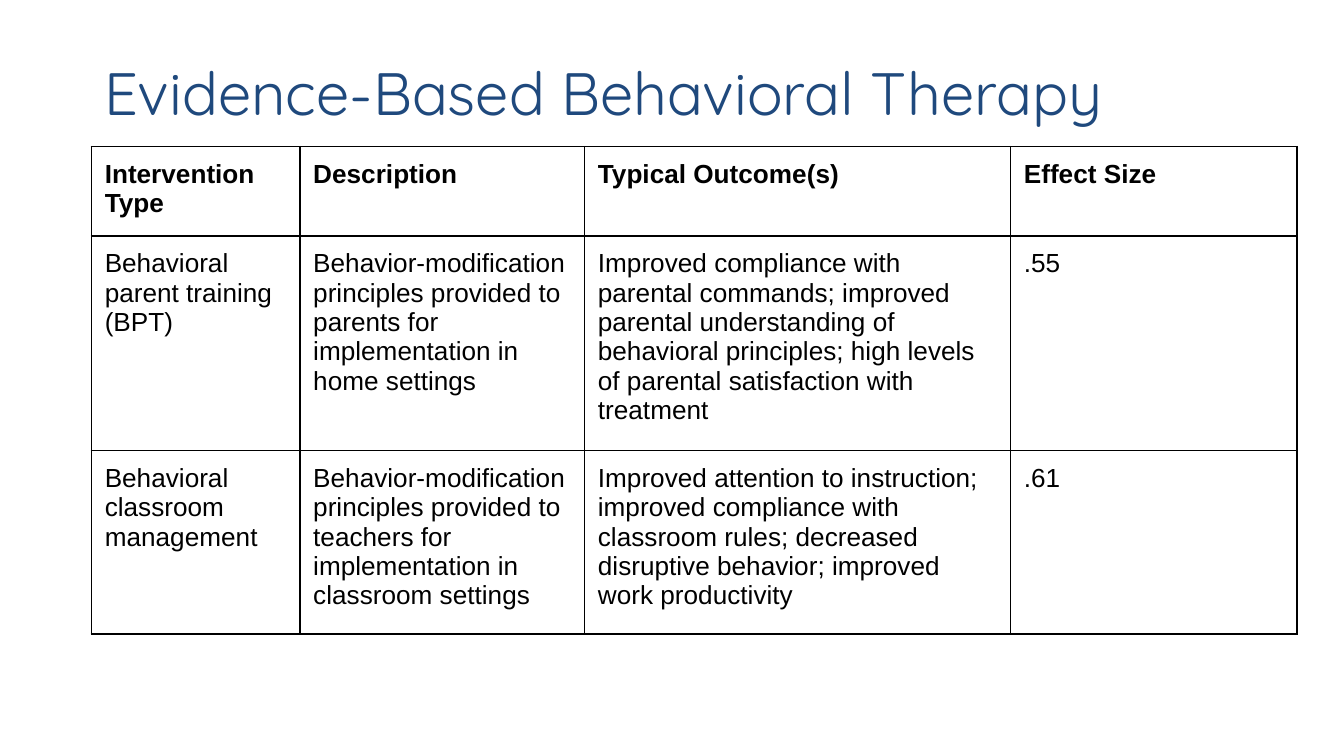
from lxml import etree
from pptx import Presentation
from pptx.dml.color import RGBColor
from pptx.enum.text import MSO_ANCHOR
from pptx.oxml.ns import qn
from pptx.util import Cm, Pt

NAVY = RGBColor(0x1F, 0x49, 0x7D)
BLACK = RGBColor(0, 0, 0)
TOP = MSO_ANCHOR.TOP
INSET = Cm(0.25)
BORDER_WIDTH = Pt(1)
BORDER_TAGS = ("a:lnL", "a:lnR", "a:lnT", "a:lnB")

TITLE_FORMAT = {"name": "Quicksand", "size": Pt(32), "bold": False}
CELL_FORMAT = {"name": "Arial", "size": Pt(14), "bold": False}
HEADER_FORMAT = {**CELL_FORMAT, "bold": True}
MARGINS = {f"margin_{side}": INSET for side in ("left", "top", "right", "bottom")}

COLUMN_WIDTHS = [Cm(3.94), Cm(5.38), Cm(8.05), Cm(5.41)]
ROW_HEIGHTS = [Cm(1.6), Cm(3.84), Cm(3.28)]
INTERVENTIONS = [
    ("Intervention Type", "Description", "Typical Outcome(s)", "Effect Size"),
    ("Behavioral parent training (BPT)",
     "Behavior-modification principles provided to parents for "
     "implementation in home settings",
     "Improved compliance with parental commands; improved parental "
     "understanding of behavioral principles; high levels of parental "
     "satisfaction with treatment",
     ".55"),
    ("Behavioral classroom management",
     "Behavior-modification principles provided to teachers for "
     "implementation in classroom settings",
     "Improved attention to instruction; improved compliance with classroom "
     "rules; decreased disruptive behavior; improved work productivity",
     ".61"),
]


def set_attributes(target, values):
    for name, value in values.items():
        setattr(target, name, value)


def write_text(frame, text, font_format, color):
    span = frame.paragraphs[0].add_run()
    span.text = text
    set_attributes(span.font, font_format)
    span.font.color.rgb = color


def add_borders(cell):
    properties = cell._tc.get_or_add_tcPr()
    for tag in BORDER_TAGS:
        line = etree.SubElement(properties, qn(tag), w=str(BORDER_WIDTH))
        fill = etree.SubElement(line, qn("a:solidFill"))
        etree.SubElement(fill, qn("a:srgbClr"), val=str(BLACK))


def add_title(page, left, top, width, height):
    box = page.shapes.add_textbox(left, top, width, height)
    set_attributes(box.text_frame,
                   {**MARGINS, "word_wrap": True, "vertical_anchor": TOP})
    write_text(box.text_frame, "Evidence-Based Behavioral Therapy",
               TITLE_FORMAT, NAVY)


def add_intervention_table(page, left, top, width, height):
    table = page.shapes.add_table(len(ROW_HEIGHTS), len(COLUMN_WIDTHS),
                                  left, top, width, height).table
    set_attributes(table, {"first_row": False, "horz_banding": False})
    for column, column_width in zip(table.columns, COLUMN_WIDTHS):
        column.width = column_width
    for row_index, (row, row_height) in enumerate(zip(table.rows, ROW_HEIGHTS)):
        row.height = row_height
        font_format = CELL_FORMAT if row_index else HEADER_FORMAT
        for cell, text in zip(row.cells, INTERVENTIONS[row_index]):
            set_attributes(cell, {**MARGINS, "vertical_anchor": TOP})
            add_borders(cell)
            cell.fill.background()
            write_text(cell.text_frame, text, font_format, BLACK)


def main():
    deck = Presentation()
    deck.slide_width, deck.slide_height = Cm(25.4), Cm(14.29)
    page = deck.slides.add_slide(deck.slide_layouts[6])
    left = Cm(1.73)
    add_title(page, left, Cm(0.8), deck.slide_width - left, Cm(1.35))
    add_intervention_table(page, left, Cm(2.77),
                           sum(COLUMN_WIDTHS), sum(ROW_HEIGHTS))
    deck.save("out.pptx")


if __name__ == "__main__":
    main()
